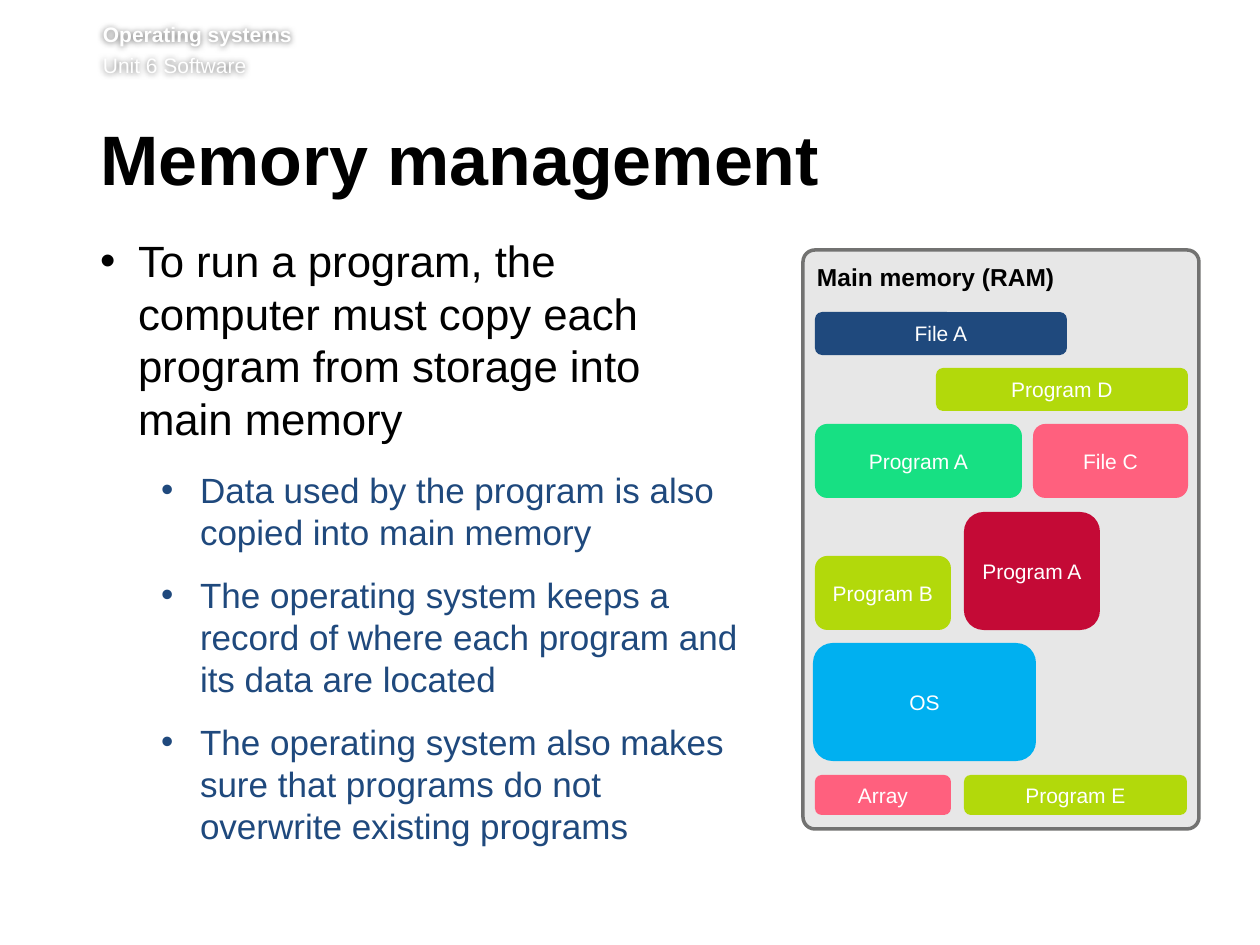
from dataclasses import dataclass

from lxml.etree import SubElement
from pptx import Presentation
from pptx.dml.color import RGBColor
from pptx.enum.shapes import MSO_SHAPE
from pptx.enum.text import MSO_ANCHOR, MSO_AUTO_SIZE, PP_ALIGN
from pptx.oxml.ns import qn
from pptx.util import Emu, Pt


@dataclass(frozen=True)
class Theme:
    """Colours, type sizes and font of the slide."""

    font: str = "Arial"
    black: str = "000000"
    white: str = "FFFFFF"
    navy: str = "1F497D"
    panel: str = "E7E7E7"
    border: str = "727271"
    lime: str = "B2D90B"
    green: str = "17E083"
    pink: str = "FF607E"
    crimson: str = "C40A36"
    sky: str = "00B0F0"
    title_size: int = 40
    lead_size: int = 25
    point_size: int = 20
    label_size: int = 14
    small_size: int = 12


def px(length):
    """Turn whole pixels into EMU."""
    return Emu(round(length * 914400 / 126))


def apply(target, values):
    """Set each named attribute on the target."""
    for name, value in values.items():
        setattr(target, name, value)


class SlideBuilder:
    """Holds the theme and the current slide, and draws its elements."""

    def __init__(self, deck, theme):
        """Start a page with a title and a body."""
        self.theme = theme
        self.page = deck.slides.add_slide(deck.slide_layouts[1])

    def place(self, box, bounds):
        """Move and size a box."""
        apply(box, dict(zip(("left", "top", "width", "height"), map(px, bounds))))

    def frame(self, box, insets, **values):
        """Set margins and layout of a text frame."""
        sides = ("margin_left", "margin_top", "margin_right", "margin_bottom")
        settings = {"word_wrap": True, "auto_size": MSO_AUTO_SIZE.NONE,
                    "vertical_anchor": MSO_ANCHOR.TOP}
        settings.update(zip(sides, map(px, insets)))
        settings.update(values)
        apply(box.text_frame, settings)
        return box.text_frame

    def add_span(self, para, text, size, color, bold=False, **values):
        """Fill a paragraph with one formatted span."""
        apply(para, values)
        span = para.add_run()
        span.text = text
        apply(span.font, {"name": self.theme.font, "size": Pt(size), "bold": bold})
        span.font.color.rgb = RGBColor.from_string(color)

    def bullet(self, para, margin, hang):
        """Give a paragraph a hanging round bullet."""
        properties = para._p.get_or_add_pPr()
        properties.set("marL", str(px(margin)))
        properties.set("indent", str(-px(hang)))
        SubElement(properties, qn("a:buFont"), typeface=self.theme.font)
        SubElement(properties, qn("a:buChar"), char="•")

    def header(self, lines, bounds):
        """Add the running header with a soft shadow."""
        box = self.page.shapes.add_textbox(*map(px, bounds))
        frame = self.frame(box, (0, 0, 0, 6))
        for index, (text, bold) in enumerate(lines):
            para = frame.add_paragraph() if index else frame.paragraphs[0]
            self.add_span(para, text, self.theme.small_size, self.theme.white, bold,
                          space_before=Pt(2.9 if index else 0))
        effects = SubElement(box._element.spPr, qn("a:effectLst"))
        shadow = SubElement(effects, qn("a:outerShdw"), blurRad="50800", dist="0")
        tint = SubElement(shadow, qn("a:srgbClr"), val=self.theme.black)
        SubElement(tint, qn("a:alpha"), val="60000")

    def title(self, text, bounds):
        """Fill the title placeholder."""
        box = self.page.shapes.title
        self.place(box, bounds)
        frame = self.frame(box, (0, 6, 13, 6))
        self.add_span(frame.paragraphs[0], text, self.theme.title_size, self.theme.black, True,
                      alignment=PP_ALIGN.LEFT, line_spacing=Pt(39), space_before=Pt(0))

    def body(self, points, bounds):
        """Fill the body with a lead point and second-level points."""
        box = self.page.placeholders[1]
        self.place(box, bounds)
        frame = self.frame(box, (0, 0, 13, 6))
        lead = (0, 38, 38, 14, self.theme.lead_size, self.theme.black)
        detail = (1, 100, 39, 12, self.theme.point_size, self.theme.navy)
        for index, text in enumerate(points):
            para = frame.add_paragraph() if index else frame.paragraphs[0]
            level, margin, hang, after, size, color = detail if index else lead
            self.bullet(para, margin, hang)
            self.add_span(para, text, size, color, level=level, space_before=Pt(0),
                          space_after=Pt(after), line_spacing=Pt(size * 1.2))

    def rounded(self, bounds, fill):
        """Draw a flat rounded rectangle without a line."""
        shape = self.page.shapes.add_shape(MSO_SHAPE.ROUNDED_RECTANGLE, *map(px, bounds))
        shape.shadow.inherit = False
        shape.fill.solid()
        shape.fill.fore_color.rgb = RGBColor.from_string(fill)
        shape.line.fill.background()
        return shape

    def panel(self, bounds):
        """Draw the outlined memory panel."""
        shape = self.rounded(bounds, self.theme.panel)
        shape.adjustments[0] = 0.03
        shape.line.color.rgb = RGBColor.from_string(self.theme.border)
        shape.line.width = Pt(2)

    def label(self, text, bounds):
        """Add the panel label."""
        box = self.page.shapes.add_textbox(*map(px, bounds))
        frame = self.frame(box, (13, 6, 13, 6), word_wrap=False,
                           auto_size=MSO_AUTO_SIZE.SHAPE_TO_FIT_TEXT)
        self.add_span(frame.paragraphs[0], text, self.theme.label_size, self.theme.black, True)

    def block(self, text, bounds, fill):
        """Draw one named block of memory."""
        shape = self.rounded(bounds, fill)
        frame = self.frame(shape, (0, 0, 0, 0), vertical_anchor=MSO_ANCHOR.MIDDLE)
        self.add_span(frame.paragraphs[0], text, self.theme.small_size, self.theme.white,
                      alignment=PP_ALIGN.CENTER)


def main():
    """Build and save the slide."""
    deck = Presentation()
    apply(deck, {"slide_width": px(1260), "slide_height": px(945)})
    theme = Theme()
    slide = SlideBuilder(deck, theme)
    slide.header([("Operating systems", True), ("Unit 6 Software", False)], (103, 22, 1111, 62))
    slide.title("Memory management", (100, 125, 1077, 92))
    slide.body([
        "To run a program, the computer must copy each program from storage into main memory",
        "Data used by the program is also copied into main memory",
        "The operating system keeps a record of where each program and its data are located",
        "The operating system also makes sure that programs do not overwrite existing programs",
    ], (100, 234, 654, 659))
    slide.panel((803, 250, 396, 579))
    slide.label("Main memory (RAM)", (804, 256, 265, 43))
    rows = [
        (355, [("File A", 815, 252, 43, theme.navy)]),
        (411, [("Program D", 936, 252, 43, theme.lime)]),
        (498, [("Program A", 815, 207, 74, theme.green), ("File C", 1033, 155, 74, theme.pink)]),
        (630, [("Program B", 815, 136, 74, theme.lime), ("Program A", 964, 136, 118, theme.crimson)]),
        (761, [("OS", 813, 223, 118, theme.sky)]),
        (815, [("Array", 815, 136, 40, theme.pink), ("Program E", 964, 223, 40, theme.lime)]),
    ]
    for bottom, blocks in rows:
        for text, left, width, height, fill in blocks:
            slide.block(text, (left, bottom - height, width, height), fill)
    deck.save("out.pptx")


if __name__ == "__main__":
    main()
